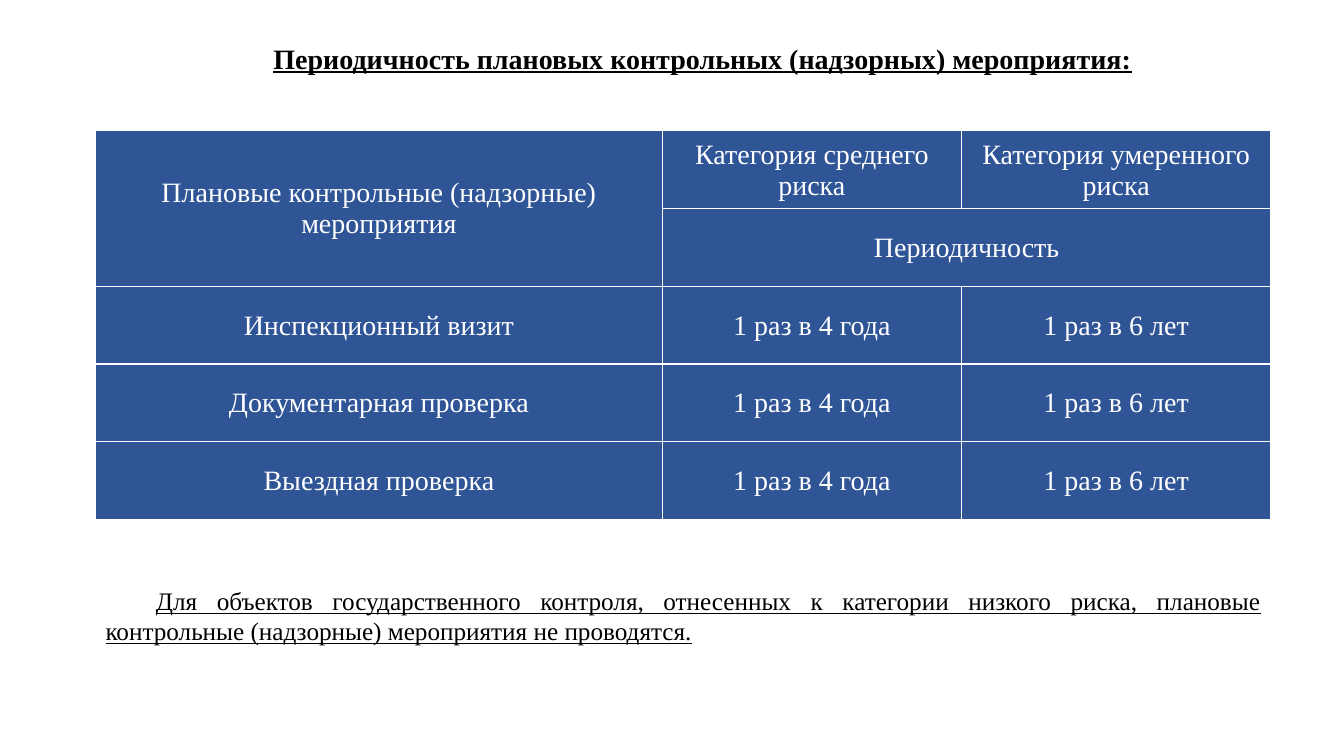
import pptx
import pptx.dml.color
import pptx.enum.text
import pptx.oxml
import pptx.oxml.ns
import pptx.util
from pptx.util import Cm, Pt

COLORS = {"text": "000000", "cell": "2F5597", "light": "FFFFFF"}
FONT = "Times New Roman"
ALIGN = pptx.enum.text.PP_ALIGN
ANCHOR = pptx.enum.text.MSO_ANCHOR


def write(frame, text, size, color, align):
    """Put one formatted paragraph into a text frame and return it."""
    para = frame.paragraphs[0]
    para.text = text
    para.alignment = align
    para.font.name = FONT
    para.font.size = Pt(size)
    para.font.color.rgb = pptx.dml.color.RGBColor.from_string(COLORS[color])
    return para


deck = pptx.Presentation()
deck.slide_width = Cm(33.87)
deck.slide_height = Cm(19.05)
page = deck.slides.add_slide(deck.slide_layouts[5])

# Heading and closing note
title = page.shapes.title
title.left, title.top, title.width, title.height = Cm(1.27), Cm(0.91), Cm(31.6), Cm(2.64)
heading = write(title.text_frame, "Периодичность плановых контрольных (надзорных) мероприятия:",
                20, "text", ALIGN.CENTER)
heading.font.bold = True

note = page.shapes.add_textbox(Cm(2.41), Cm(14.63), Cm(29.62), Cm(1.8))
remark = write(note.text_frame,
               "Для объектов государственного контроля, отнесенных к категории низкого риска, "
               "плановые контрольные (надзорные) мероприятия не проводятся.",
               18, "text", ALIGN.JUSTIFY)

for box, para in ((title, heading), (note, remark)):
    box.text_frame.word_wrap = True
    box.text_frame.auto_size = pptx.enum.text.MSO_AUTO_SIZE.NONE
    box.text_frame.vertical_anchor = ANCHOR.TOP
    para.font.underline = True
    properties = para._p.get_or_add_pPr()
    properties.set("marL", "0")
    properties.set("indent", str(Cm(1.27)))

# Table of inspection frequency
rows = [
    ["Плановые контрольные (надзорные) мероприятия",
     "Категория среднего риска", "Категория умеренного риска"],
    ["", "Периодичность", ""],
]
for event in ("Инспекционный визит", "Документарная проверка", "Выездная проверка"):
    rows.append([event, "1 раз в 4 года", "1 раз в 6 лет"])

table = page.shapes.add_table(len(rows), 3, Cm(2.41), Cm(3.29), Cm(29.62), Cm(9.8)).table
table.first_row = False
table.horz_banding = False
for column, width in zip(table.columns, (14.28, 7.54, 7.8)):
    column.width = Cm(width)

for row_index, row in enumerate(rows):
    table.rows[row_index].height = Cm(1.96)
    for column_index, text in enumerate(row):
        cell = table.cell(row_index, column_index)
        cell.margin_left = cell.margin_right = cell.margin_top = Cm(0.03)
        cell.margin_bottom = 0
        cell.vertical_anchor = ANCHOR.MIDDLE
        for side in ("lnL", "lnR", "lnT", "lnB"):
            cell._tc.get_or_add_tcPr().append(pptx.oxml.parse_xml(
                f'<a:{side} {pptx.oxml.ns.nsdecls("a")} w="{Pt(1)}"><a:solidFill>'
                f'<a:srgbClr val="{COLORS["light"]}"/></a:solidFill></a:{side}>'))
        cell.fill.solid()
        cell.fill.fore_color.rgb = pptx.dml.color.RGBColor.from_string(COLORS["cell"])
        if text:
            write(cell.text_frame, text, 20, "light", ALIGN.CENTER)

table.cell(0, 0).merge(table.cell(1, 0))
table.cell(1, 1).merge(table.cell(1, 2))

deck.save("out.pptx")
